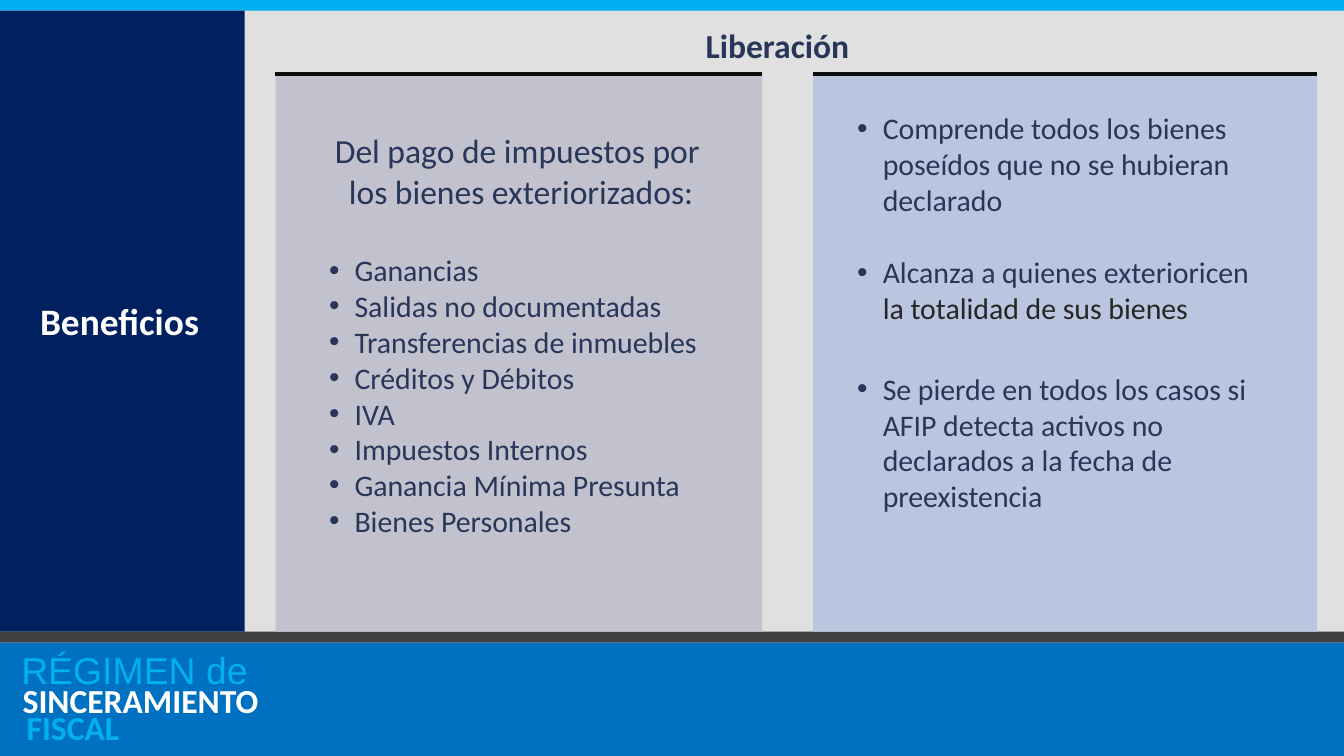
from dataclasses import dataclass
from lxml.etree import SubElement as Sub
from pptx import Presentation
from pptx.dml.color import RGBColor as RGB
from pptx.enum.shapes import MSO_CONNECTOR as Conn, MSO_SHAPE as Shape
from pptx.enum.text import MSO_AUTO_SIZE as Auto, PP_ALIGN as Align
from pptx.oxml.ns import qn
from pptx.util import Inches, Pt


@dataclass(frozen=True)
class Theme:
    """Colours, fonts and type sizes of the slide."""
    page: str = "E0E0E0"
    foot: str = "0070C0"
    rule: str = "404040"
    sky: str = "00B0F0"
    navy: str = "002060"
    gray: str = "C1C2CD"
    blue: str = "BAC5DF"
    line: str = "0D0D0D"
    ink: str = "283659"
    dark: str = "262626"
    white: str = "FFFFFF"
    body: str = "Calibri"
    alt: str = "Arial"
    big: int = 20
    head: int = 18
    item: int = 16


T = Theme()
WIDE = 10
HIGH = WIDE * 9 / 16
HEADS = ["Del pago de impuestos por", " los bienes exteriorizados:"]
TAXES = ["Ganancias", "Salidas no documentadas", "Transferencias de inmuebles",
         "Créditos y Débitos", "IVA", "Impuestos Internos",
         "Ganancia Mínima Presunta", "Bienes Personales"]
SCOPE = [
    (0, [("Comprende todos los bienes poseídos que no se hubieran declarado", T.ink)]),
    (19.5, [("Alcanza a quienes exterioricen ", T.ink),
            ("la totalidad de sus bienes", T.dark)]),
    (24, [("Se pierde en todos los casos si AFIP detecta activos no declarados "
           "a la fecha de preexistencia", T.ink)]),
]


def block(slide, box, color):
    """Draw a plain filled rectangle."""
    shape = slide.shapes.add_shape(Shape.RECTANGLE, *map(Inches, box))
    shape.shadow.inherit = False
    shape.fill.solid()
    shape.fill.fore_color.rgb = RGB.from_string(color)
    shape.line.fill.background()


def frame(slide, box, wrap=True):
    """Add a text box and return its text frame."""
    text = slide.shapes.add_textbox(*map(Inches, box)).text_frame
    text.word_wrap = wrap
    text.auto_size = Auto.NONE
    return text


def write(para, text, size, color, bold=False, font=T.body):
    """Append a styled run to a paragraph."""
    run = para.add_run()
    run.text = text
    style = {"name": font, "size": Pt(size), "bold": bold}
    for key, value in style.items():
        setattr(run.font, key, value)
    run.font.color.rgb = RGB.from_string(color)


def label(slide, box, text, size, color, bold=True, font=T.body,
          align=Align.LEFT, wrap=True):
    """Add a one-line text box."""
    para = frame(slide, box, wrap).paragraphs[0]
    para.alignment = align
    write(para, text, size, color, bold, font)


def bullet(para, gap=0):
    """Give a paragraph a hanging bullet and the space before it."""
    props = para._p.get_or_add_pPr()
    props.set("marL", str(Inches(0.68)))
    props.set("indent", str(Inches(-0.19)))
    Sub(props, qn("a:buFont")).set("typeface", T.alt)
    Sub(props, qn("a:buChar")).set("char", "•")
    if gap:
        para.space_before = Pt(gap)


def edge(slide, x, y, width):
    """Draw the dark line along the top of a panel."""
    line = slide.shapes.add_connector(
        Conn.STRAIGHT, *map(Inches, (x, y, x + width, y)))
    line.line.color.rgb = RGB.from_string(T.line)
    line.line.width = Pt(2.25)
    Sub(line._element.spPr, qn("a:effectLst"))


def panel(slide, box, color):
    """Draw a column panel with its top line."""
    block(slide, box, color)
    edge(slide, *box[:3])


def taxes(slide, box):
    """Fill the left column with the taxes released."""
    x, y, w, h = box
    panel(slide, box, T.gray)
    text = frame(slide, (x - 0.19, y + 0.37, w + 0.36, 3.16))
    for n, line in enumerate(HEADS):
        para = text.add_paragraph() if n else text.paragraphs[0]
        para.alignment = Align.CENTER
        write(para, line, T.head, T.ink)
    for n, name in enumerate(TAXES):
        para = text.add_paragraph()
        bullet(para, 0 if n else 22)
        write(para, name, T.item, T.ink)


def scope(slide, box):
    """Fill the right column with the scope of the release."""
    x, y, w, h = box
    panel(slide, box, T.blue)
    text = frame(slide, (x - 0.26, y + 0.22, w - 0.05, 3.13))
    for n, (gap, runs) in enumerate(SCOPE):
        para = text.add_paragraph() if n else text.paragraphs[0]
        bullet(para, gap)
        for words, color in runs:
            write(para, words, T.item, color)


def footer(slide, box):
    """Draw the bottom band with the name of the regime."""
    x, y, w, h = box
    block(slide, box, T.foot)
    block(slide, (x, y - 0.08, w, 0.08), T.rule)
    label(slide, (x + 0.06, y - 0.01, 4.45, 0.44), "RÉGIMEN de",
          T.big, T.sky, False, T.alt)
    label(slide, (x + 0.07, y + 0.23, 4.35, 0.4), "SINCERAMIENTO", T.head, T.white)
    label(slide, (x + 0.1, y + 0.43, 1.79, 0.4), "FISCAL", T.head, T.sky)


def side(slide, box):
    """Draw the left band with the section name."""
    x, y, w, h = box
    block(slide, box, T.navy)
    label(slide, (x + 0.2, y + 2.09, 1.4, 0.44), "Beneficios",
          T.big, T.white, wrap=False)


def main():
    """Build and save the slide."""
    deck = Presentation()
    deck.slide_width, deck.slide_height = Inches(WIDE), Inches(HIGH)
    slide = deck.slides.add_slide(deck.slide_layouts[6])
    block(slide, (0, 0, WIDE, HIGH), T.page)
    footer(slide, (0, 4.78, WIDE, HIGH - 4.78))
    block(slide, (0, 0, WIDE, 0.08), T.sky)
    side(slide, (0, 0.08, 1.82, 4.62))
    label(slide, (1.93, 0.14, 7.71, 0.4), "Liberación", T.head, T.ink,
          align=Align.CENTER)
    taxes(slide, (2.05, 0.55, 3.62, 4.15))
    scope(slide, (6.05, 0.55, 3.75, 4.15))
    deck.save("out.pptx")


if __name__ == "__main__":
    main()
